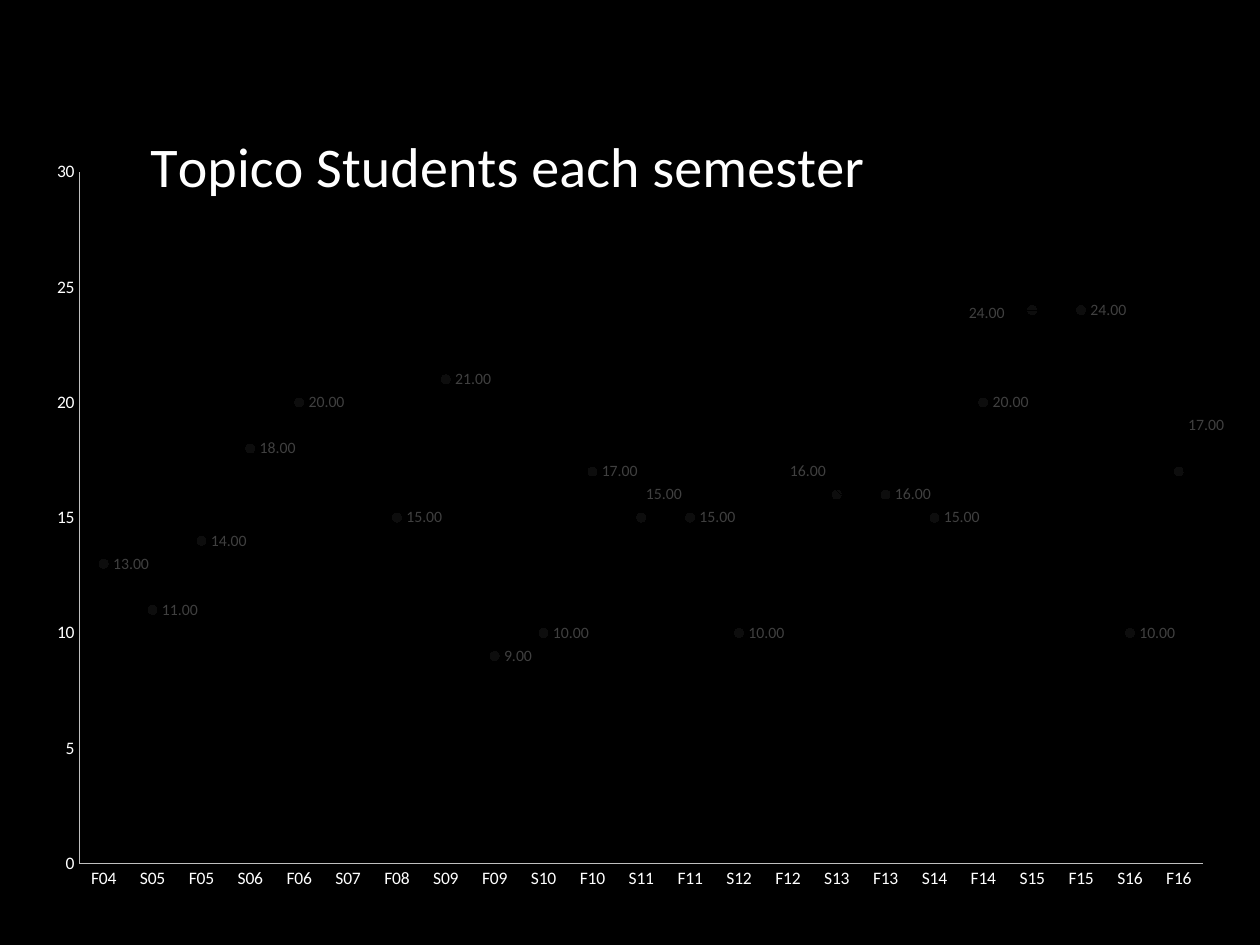
from lxml.etree import SubElement
from pptx import Presentation
from pptx.chart.data import CategoryChartData
from pptx.dml.color import RGBColor
from pptx.enum.chart import (XL_CHART_TYPE as ChartType, XL_LABEL_POSITION as LabelPosition,
                             XL_MARKER_STYLE as MarkerStyle, XL_TICK_MARK as TickMark)
from pptx.oxml.ns import qn
from pptx.util import Cm, Pt

SEMESTERS = ["F04", "S05", "F05", "S06", "F06", "S07", "F08", "S09", "F09", "S10", "F10", "S11",
             "F11", "S12", "F12", "S13", "F13", "S14", "F14", "S15", "F15", "S16", "F16"]
STUDENTS = [13, 11, 14, 18, 20, None, 15, 21, 9, 10, 17, 15,
            15, 10, None, 16, 16, 15, 20, 24, 24, 10, 17]
# Labels moved off their usual place, as fractions of the chart size
LABEL_SHIFTS = {"S11": (-0.004, -0.027), "S13": (-0.047, -0.027),
                "S15": (-0.061, 0.004), "F16": (0, -0.053)}


def color(hex_string):
    return RGBColor.from_string(hex_string)


def place(parent, index, inner=False, **fractions):
    """Give a chart part a manual layout, as its child number index."""
    for old_layout in parent.findall(qn("c:layout")):
        parent.remove(old_layout)
    layout = SubElement(parent, qn("c:layout"))
    parent.insert(index, layout)
    manual = SubElement(layout, qn("c:manualLayout"))
    settings = {"layoutTarget": "inner"} if inner else {}
    if inner or parent.tag == qn("c:title"):
        settings.update(xMode="edge", yMode="edge")
    settings.update(fractions)
    for name, value in settings.items():
        SubElement(manual, qn(f"c:{name}")).set("val", str(value))


class ChartSlide:
    font_name = "Calibri"
    text, axis_line, marker, label = "FFFFFF", "BFBFBF", "0D0D0D", "404040"
    label_format = "0.00"

    def __init__(self, presentation, background):
        self.slide = presentation.slides.add_slide(presentation.slide_layouts[6])
        fill = self.slide.background.fill
        fill.solid()
        fill.fore_color.rgb = color(background)

    def style_font(self, font, size, hex_string):
        font.name, font.size, font.bold = self.font_name, Pt(size), False
        font.color.rgb = color(hex_string)

    def add_line_chart(self, left, top, width, height, categories, values):
        data = CategoryChartData(number_format="0")
        data.categories = categories
        data.add_series("Series 1", values)
        chart = self.slide.shapes.add_chart(
            ChartType.LINE_MARKERS, Cm(left), Cm(top), Cm(width), Cm(height), data).chart
        chart.has_legend = False
        self.style_font(chart.font, 10, "000000")
        plot_area = chart.plots[0]._element.getparent()
        place(plot_area, 0, inner=True, x=0.039, y=0.153, w=0.941, h=0.798)
        return chart

    def add_title(self, chart, text):
        chart.has_title = True
        paragraph = chart.chart_title.text_frame.paragraphs[0]
        paragraph.text = text
        self.style_font(paragraph.runs[0].font, 32, self.text)
        place(chart.chart_title._element, 1, x=0.09, y=0.09)

    def style_axis(self, axis):
        axis.has_major_gridlines = False
        axis.major_tick_mark = axis.minor_tick_mark = TickMark.NONE
        axis.format.line.color.rgb = color(self.axis_line)
        axis.format.line.width = Pt(0.75)
        self.style_font(axis.tick_labels.font, 10, self.text)

    def style_series(self, series):
        series.smooth = True
        series.format.line.fill.background()
        marker = series.marker
        marker.style, marker.size = MarkerStyle.CIRCLE, 5
        marker.format.fill.solid()
        marker.format.fill.fore_color.rgb = color(self.marker)
        marker.format.line.fill.background()

    def add_labels(self, series, categories, shifts):
        labels = series.data_labels
        labels.show_value = True
        labels.number_format, labels.number_format_is_linked = self.label_format, False
        labels.position = LabelPosition.RIGHT
        self.style_font(labels.font, 9, self.label)
        for category, (x, y) in shifts.items():
            index = categories.index(category)
            point_label = series.points[index].data_label
            point_label.position = LabelPosition.RIGHT
            self.style_font(point_label.font, 9, self.label)
            element = next(item for item in labels._element.findall(qn("c:dLbl"))
                           if item.find(qn("c:idx")).get("val") == str(index))
            place(element, 1, x=x, y=y)
            number_format = SubElement(element, qn("c:numFmt"))
            number_format.set("formatCode", self.label_format)
            number_format.set("sourceLinked", "0")
            element.insert(2, number_format)


def main():
    presentation = Presentation()
    presentation.slide_width, presentation.slide_height = Cm(25.4), Cm(19.05)
    page = ChartSlide(presentation, "000000")

    # Chart and title
    chart = page.add_line_chart(0.66, 0.79, 24.08, 17.48, SEMESTERS, STUDENTS)
    page.add_title(chart, "Topico Students each semester")

    # Axes
    for axis in (chart.category_axis, chart.value_axis):
        page.style_axis(axis)
    value_axis = chart.value_axis
    value_axis.minimum_scale, value_axis.maximum_scale, value_axis.major_unit = 0, 30, 5
    value_axis.tick_labels.number_format = "0"
    value_axis.tick_labels.number_format_is_linked = False

    # Points and their labels
    chart.plots[0].vary_by_categories = False
    series = chart.plots[0].series[0]
    page.style_series(series)
    page.add_labels(series, SEMESTERS, LABEL_SHIFTS)

    presentation.save("out.pptx")


if __name__ == "__main__":
    main()
